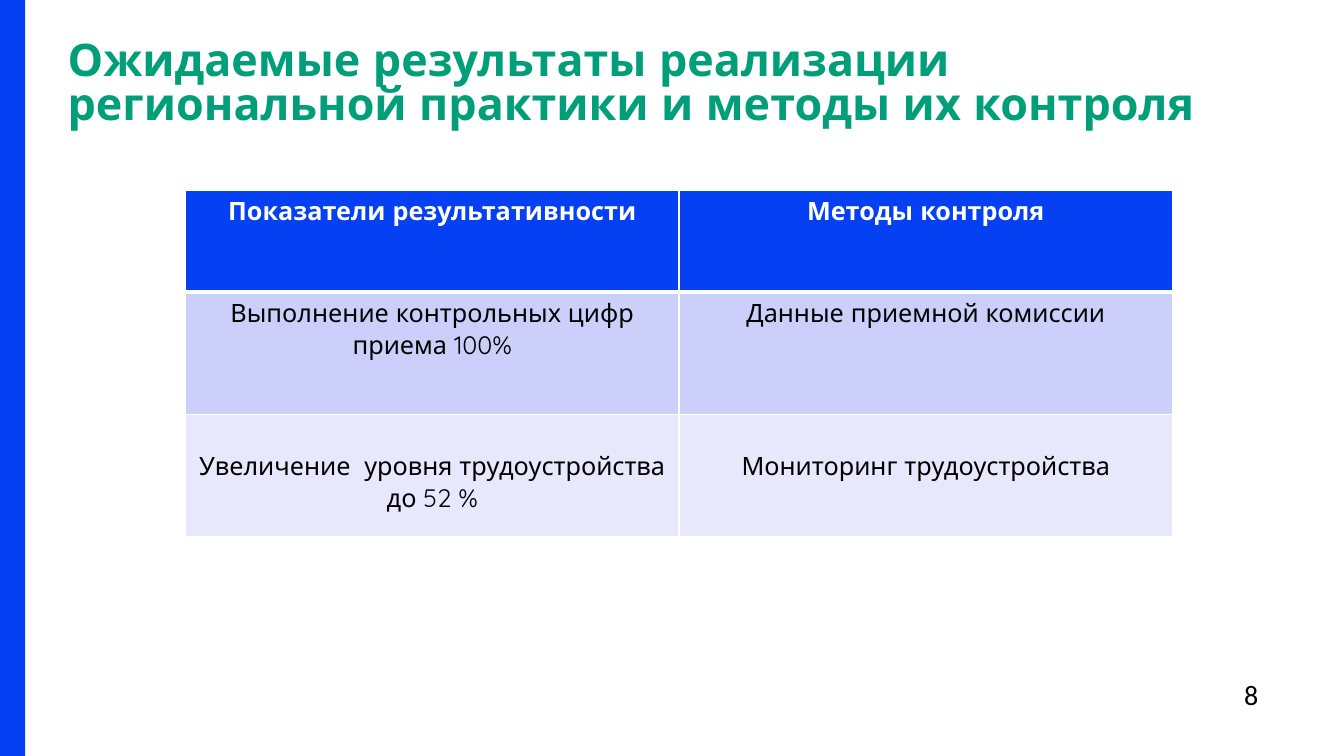
from dataclasses import dataclass

from lxml import etree
from pptx import Presentation
from pptx import util as u
from pptx.dml.color import RGBColor
from pptx.enum import shapes, text
from pptx.oxml.ns import qn

COLORS = {
    "blue": "0540F2",
    "green": "009F79",
    "white": "FFFFFF",
    "black": "000000",
    "lavender": "CCCFFA",
    "pale": "E7E8FC",
}
HEADING_FONT = "Quicksand"


@dataclass
class ResultRow:
    indicator: str
    control: str
    height: float
    fill: str
    ink: str = "black"
    bold: bool = False
    top_margin: float = 0.05
    top_line: int = 1
    bottom_line: int = 1


ROWS = [
    ResultRow("Показатели результативности", "Методы контроля", 1.01, "blue",
              ink="white", bold=True, bottom_line=3),
    ResultRow("Выполнение контрольных цифр приема 100%", "Данные приемной комиссии",
              1.21, "lavender", top_line=3),
    ResultRow("Увеличение  уровня трудоустройства до 52 %", "Мониторинг трудоустройства",
              1.21, "pale", top_margin=0.36),
]
TITLE_LINES = [
    "Ожидаемые результаты реализации ",
    "региональной практики и методы их контроля",
]


def rgb(name: str) -> RGBColor:
    return RGBColor.from_string(COLORS[name])


def add_run(paragraph, wording: str, size: int, font: str, ink: str, bold: bool = False) -> None:
    run = paragraph.add_run()
    run.text = wording
    run.font.size = u.Pt(size)
    run.font.name = font
    run.font.bold = bold
    run.font.color.rgb = rgb(ink)


def set_borders(cell, row: ResultRow) -> None:
    properties = cell._tc.get_or_add_tcPr()
    widths = {"lnL": 1, "lnR": 1, "lnT": row.top_line, "lnB": row.bottom_line}
    for side, width in widths.items():
        line = etree.SubElement(properties, qn(f"a:{side}"), w=str(u.Pt(width)))
        fill = etree.SubElement(line, qn("a:solidFill"))
        etree.SubElement(fill, qn("a:srgbClr"), val=COLORS["white"])


def fill_cell(cell, wording: str, row: ResultRow) -> None:
    set_borders(cell, row)
    cell.fill.solid()
    cell.fill.fore_color.rgb = rgb(row.fill)
    cell.margin_top = u.Inches(row.top_margin)
    paragraph = cell.text_frame.paragraphs[0]
    paragraph.alignment = text.PP_ALIGN.CENTER
    add_run(paragraph, wording, 18, HEADING_FONT, row.ink, row.bold)


def add_title(slide) -> None:
    title = slide.shapes.title
    title.left, title.top = u.Inches(0.67), u.Inches(0.4)
    title.width, title.height = u.Inches(11.93), u.Inches(0.49)
    frame = title.text_frame
    frame.margin_left = frame.margin_top = frame.margin_right = frame.margin_bottom = 0
    frame.auto_size = text.MSO_AUTO_SIZE.NONE
    frame.word_wrap = True
    frame.vertical_anchor = text.MSO_ANCHOR.TOP
    paragraph = frame.paragraphs[0]
    paragraph.alignment = text.PP_ALIGN.LEFT
    paragraph.line_spacing = u.Pt(32)
    for index, wording in enumerate(TITLE_LINES):
        if index:
            paragraph.add_line_break()
        add_run(paragraph, wording, 32, HEADING_FONT, "green", True)


def add_side_bar(slide) -> None:
    bar = slide.shapes.add_shape(shapes.MSO_SHAPE.RECTANGLE, 0, 0, u.Inches(0.25), u.Inches(7.5))
    bar.shadow.inherit = False
    bar.fill.solid()
    bar.fill.fore_color.rgb = rgb("blue")
    bar.line.fill.background()


def add_results(slide) -> None:
    height = sum(row.height for row in ROWS)
    results = slide.shapes.add_table(
        len(ROWS), 2, u.Inches(1.84), u.Inches(1.89), u.Inches(9.79), u.Inches(height)
    ).table
    results.horz_banding = False
    for index, row in enumerate(ROWS):
        results.rows[index].height = u.Inches(row.height)
        for column, wording in enumerate((row.indicator, row.control)):
            fill_cell(results.cell(index, column), wording, row)


def add_page_number(slide) -> None:
    page = slide.shapes.add_textbox(u.Inches(12.24), u.Inches(6.67), u.Inches(0.53), u.Inches(0.44))
    page.text_frame.word_wrap = False
    page.text_frame.auto_size = text.MSO_AUTO_SIZE.SHAPE_TO_FIT_TEXT
    add_run(page.text_frame.paragraphs[0], "8", 20, "Calibri", "black")


def main() -> None:
    deck = Presentation()
    deck.slide_width, deck.slide_height = u.Inches(13.33), u.Inches(7.5)
    slide = deck.slides.add_slide(deck.slide_layouts.get_by_name("Title Only"))
    add_title(slide)
    add_side_bar(slide)
    add_results(slide)
    add_page_number(slide)
    deck.save("out.pptx")


if __name__ == "__main__":
    main()
